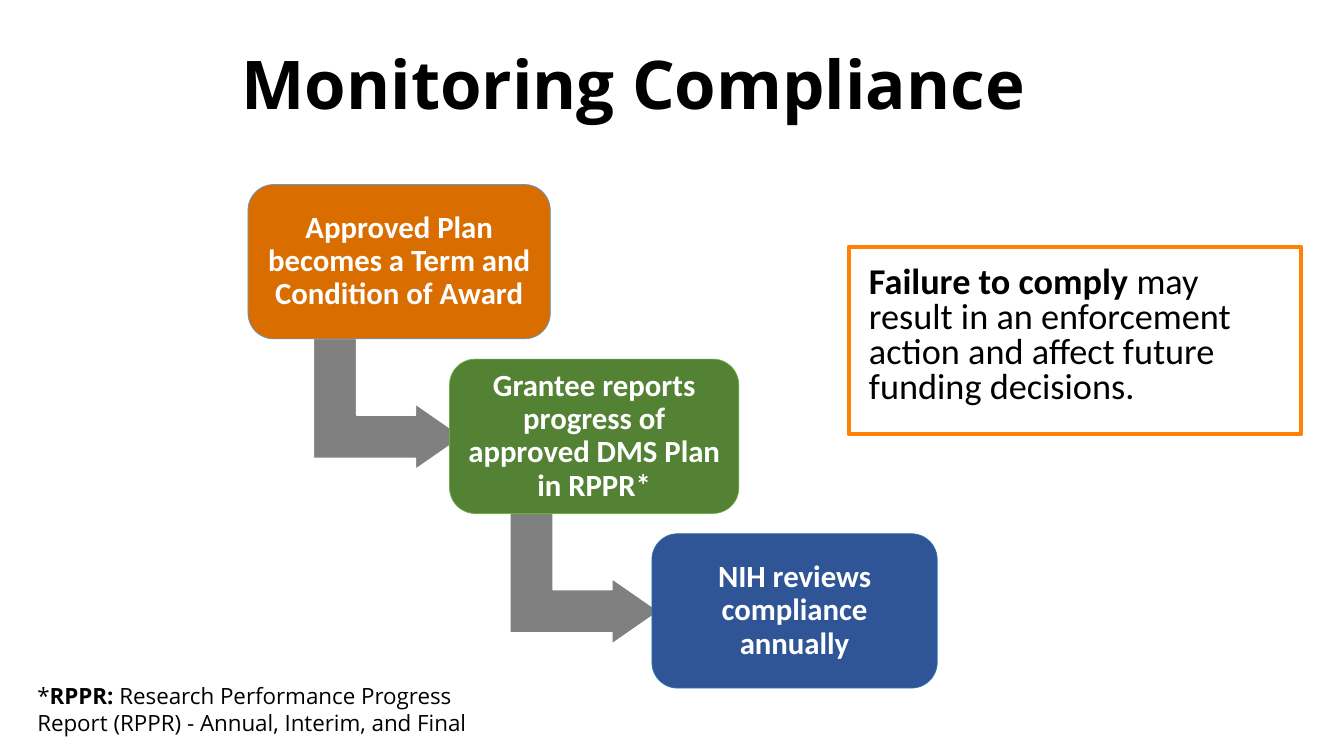
from dataclasses import dataclass

from pptx import Presentation
from pptx.dml.color import RGBColor
from pptx.enum.shapes import MSO_SHAPE as Shape
from pptx.enum.text import MSO_ANCHOR as Anchor, PP_ALIGN as Align
from pptx.util import Cm, Pt

TITLE = "Monitoring Compliance"
# text, left and width in cm, fill, outline, left of the arrow to the next step in cm
STEPS = [
    ("Approved Plan becomes a Term and Condition of Award",
     6.25, 7.62, "DA6D00", "5B9BD5", 8.13),
    ("Grantee reports progress of approved DMS Plan in RPPR*",
     11.33, 7.29, "548235", "70AD47", 13.08),
    ("NIH reviews compliance annually",
     16.43, 7.19, "2F5597", "2E75B6", None),
]
# runs: text, bold
WARNING = [
    ("Failure to comply ", True),
    ("may result in an enforcement action and affect future funding decisions.", False),
]
FOOTNOTE = [
    ("*", False),
    ("RPPR:", True),
    (" Research Performance Progress Report (RPPR) - Annual, Interim, and Final", False),
]


@dataclass(frozen=True)
class Theme:
    heading_font: str = "Open Sans"
    body_font: str = "Calibri"
    ink: str = "000000"
    paper: str = "FFFFFF"
    arrow: str = "808080"
    warning: str = "FF8205"
    title_size: float = 48
    step_size: float = 22
    warning_size: float = 25.9
    footnote_size: float = 16


THEME = Theme()
STEP_TOP, STEP_HEIGHT, STEP_PITCH = 4.65, 3.89, 4.4
ARROW_WIDTH, ARROW_HEIGHT, ARROW_DROP = 3.3, 3.76, 3.65

prs = Presentation()
prs.slide_width, prs.slide_height = Cm(33.87), Cm(19.05)
slide = prs.slides.add_slide(prs.slide_layouts[6])


def add_box(kind, left, top, width, height, fill=None, line=None, line_width=1):
    box = slide.shapes.add_shape(kind, Cm(left), Cm(top), Cm(width), Cm(height))
    box.shadow.inherit = False
    if fill:
        box.fill.solid()
        box.fill.fore_color.rgb = RGBColor.from_string(fill)
    else:
        box.fill.background()
    box.line.color.rgb = RGBColor.from_string(line)
    box.line.width = Pt(line_width)
    return box


def add_label(left, top, width, height):
    return slide.shapes.add_textbox(Cm(left), Cm(top), Cm(width), Cm(height))


def write(box, runs, font, size, color, align=Align.LEFT, anchor=Anchor.TOP,
          spacing=1.0, inset=None):
    frame = box.text_frame
    frame.word_wrap = True
    frame.vertical_anchor = anchor
    if inset is not None:
        frame.margin_left = frame.margin_right = Cm(inset)
        frame.margin_top = frame.margin_bottom = Cm(inset)
    paragraph = frame.paragraphs[0]
    paragraph.alignment = align
    paragraph.line_spacing = spacing
    for text, bold in runs:
        run = paragraph.add_run()
        run.text = text
        run.font.name, run.font.size, run.font.bold = font, Pt(size), bold
        run.font.color.rgb = RGBColor.from_string(color)


def add_arrow(left, top):
    """Add an arrow that goes down from one step and right into the next."""
    arrow = add_box(Shape.BENT_UP_ARROW, left, top, ARROW_WIDTH, ARROW_HEIGHT,
                    THEME.arrow, THEME.paper)
    arrow.rotation = 90
    for index, value in enumerate((0.33, 0.25, 0.36)):
        arrow.adjustments[index] = value


write(add_label(1.5, 0.36, 28.93, 3.68), [(TITLE, True)], THEME.heading_font,
      THEME.title_size, THEME.ink, Align.CENTER, Anchor.MIDDLE, 0.9)

for number, (text, left, width, fill, line, arrow_left) in enumerate(STEPS):
    top = STEP_TOP + number * STEP_PITCH
    if arrow_left is not None:
        add_arrow(arrow_left, top + ARROW_DROP)
    step = add_box(Shape.ROUNDED_RECTANGLE, left, top, width, STEP_HEIGHT,
                   fill, line, 0.5)
    write(step, [(text, True)], THEME.body_font, THEME.step_size, THEME.paper,
          Align.CENTER, Anchor.MIDDLE, 0.9, 0.23)

warning = add_box(Shape.RECTANGLE, 21.39, 6.22, 11.4, 4.72,
                  line=THEME.warning, line_width=3)
write(warning, WARNING, THEME.body_font, THEME.warning_size, THEME.ink,
      spacing=0.8, inset=0.51)

write(add_label(0.69, 17.07, 12.62, 1.63), FOOTNOTE, THEME.heading_font,
      THEME.footnote_size, THEME.ink)

prs.save("out.pptx")
